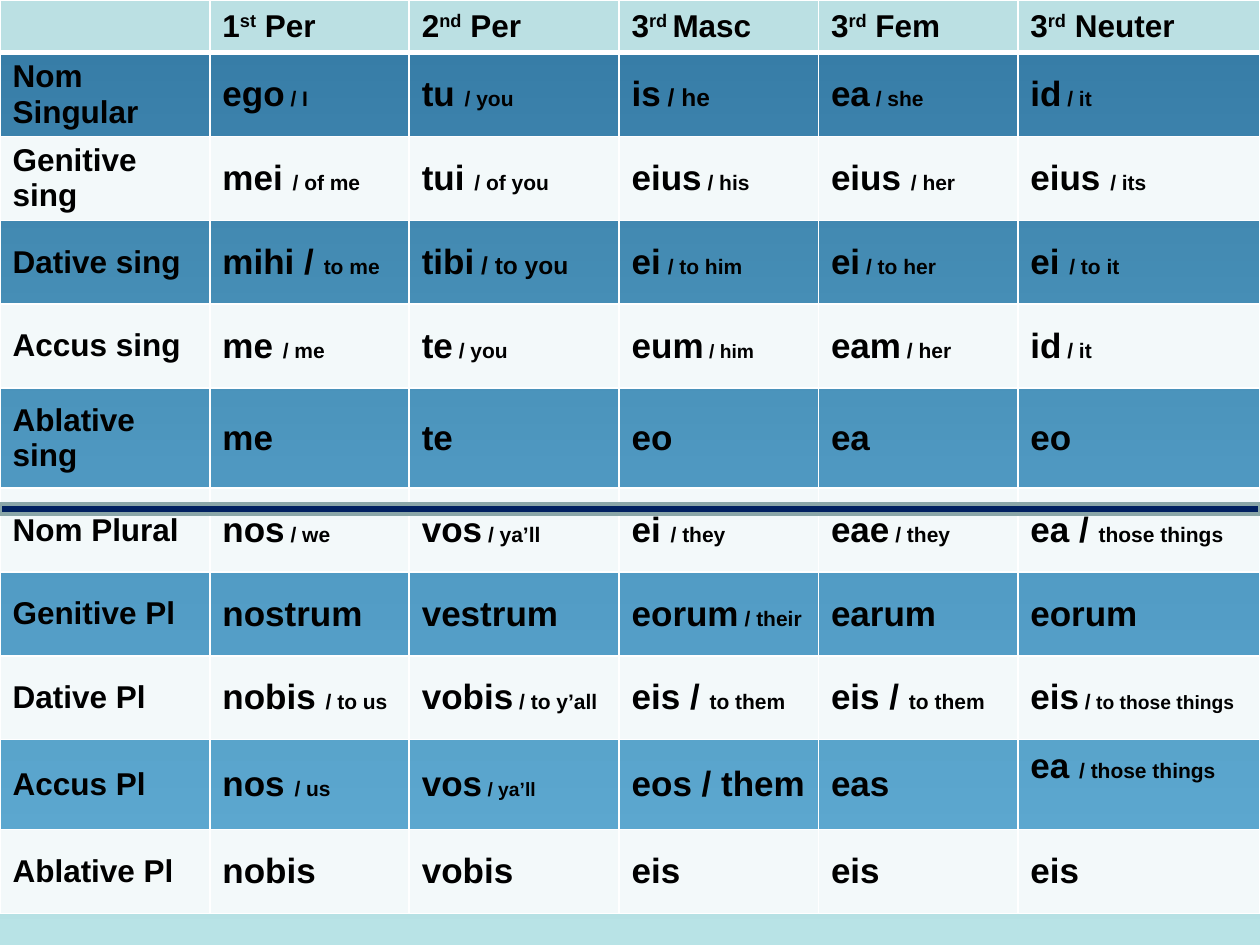
from copy import deepcopy

from lxml.etree import SubElement
from pptx import Presentation
from pptx.dml.color import RGBColor
from pptx.enum.shapes import MSO_SHAPE
from pptx.enum.text import MSO_ANCHOR
from pptx.oxml.ns import qn
from pptx.util import Cm, Pt

BLACK = RGBColor(0x00, 0x00, 0x00)
WHITE = RGBColor(0xFF, 0xFF, 0xFF)
HEADER_TEAL = RGBColor(0xBB, 0xE0, 0xE3)
PALE = RGBColor(0xF3, 0xF9, 0xFA)
BLUE = RGBColor(0x00, 0x70, 0xC0)
NAVY = RGBColor(0x00, 0x20, 0x60)
GREY_TEAL = RGBColor(0x8A, 0xA6, 0xA8)
BACKGROUND_STOPS = [
    (0, RGBColor(0x6D, 0x86, 0x88)),
    (0.5, RGBColor(0x9B, 0xBF, 0xC2)),
    (1, RGBColor(0xB8, 0xE3, 0xE6)),
]

FONT = "Arial"
LABEL_SIZE, LATIN_SIZE, GLOSS_SIZE = 18, 20, 12
COLUMN_WIDTHS = [4.23, 4.02, 4.23, 4.02, 4.02, 4.88]
HEADER_HEIGHT = 1.06

# Number, ordinal ending, rest of the heading
HEADINGS = [("1", "st", " Per"), ("2", "nd", " Per"), ("3", "rd ", "Masc"),
            ("3", "rd", " Fem"), ("3", "rd", " Neuter")]

# Label, height in cm, opacity of the blue fill (None for a pale row), cells.
# A cell is a Latin form, or the form with its glosses; a gloss may carry a size.
ROWS = [
    ("Nom Singular", 1.69, 51,
     [("ego", " / I"), ("tu ", "/ you"), ("is", (" / he", 14)),
      ("ea", " / she"), ("id", " / it")]),
    ("Genitive sing", 1.69, None,
     [("mei ", "/ of me"), ("tui ", "/ of you"), ("eius", " / his"),
      ("eius ", "/ her"), ("eius ", "/ its")]),
    ("Dative sing", 1.69, 49,
     [("mihi / ", "to me"), ("tibi", (" / to you", 14)),
      ("ei", (" ", 14), "/ to him"), ("ei", " / to her"), ("ei ", "/ to it")]),
    ("Accus sing", 1.69, None,
     [("me ", "/ me"), ("te", " / you"), ("eum", (" / him", 11)),
      ("eam", " / her"), ("id", " / it")]),
    ("Ablative sing", 2.02, 49, ["me", "te", "eo", "ea", "eo"]),
    ("Nom Plural", 1.69, None,
     [("nos", " / we"), ("vos", " / ya’ll"), ("ei ", "/ they"),
      ("eae", " / they"), ("ea / ", "those things")]),
    ("Genitive Pl", 1.69, 49,
     ["nostrum", "vestrum", ("eorum", " / their"), "earum", "eorum"]),
    ("Dative Pl", 1.69, None,
     [("nobis ", "/ to us"), ("vobis", " / to y’all"), ("eis / ", "to them"),
      ("eis / ", "to them"), ("eis", " /", (" to those things", 11))]),
    ("Accus Pl", 1.81, 48,
     [("nos ", "/ us"), ("vos", (" / ya’ll", 11)), "eos / them", "eas",
      ("ea ", "/ those things")]),
    ("Ablative Pl", 1.69, None, ["nobis", "vobis", "eis", "eis", "eis"]),
]


def paint_background(page):
    fill = page.background.fill
    fill.gradient()
    fill.gradient_angle = 270
    stop_list = page._element.find(".//" + qn("a:gsLst"))
    stop_list.append(deepcopy(stop_list[0]))
    for stop, (position, color) in zip(fill.gradient_stops, BACKGROUND_STOPS):
        stop.position = position
        stop.color.rgb = color


def style_cell(cell, color, opacity=None, bottom_width=1):
    """Set white borders, fill and anchor; opacity is a percentage."""
    properties = cell._tc.get_or_add_tcPr()
    for side, width in (("L", 1), ("R", 1), ("T", 1), ("B", bottom_width)):
        line = SubElement(properties, qn(f"a:ln{side}"), w=str(Pt(width)))
        SubElement(SubElement(line, qn("a:solidFill")), qn("a:srgbClr"), val=str(WHITE))
    cell.fill.solid()
    cell.fill.fore_color.rgb = color
    if opacity is not None:
        fill_color = properties.find(qn("a:solidFill"))[0]
        SubElement(fill_color, qn("a:alpha"), val=str(opacity * 1000))
    cell.vertical_anchor = MSO_ANCHOR.MIDDLE


def write_cell(cell, parts):
    """Write (text, size) parts in one bold paragraph and return its runs."""
    para = cell.text_frame.paragraphs[0]
    para.font.name = FONT
    para.font.bold = True
    para.font.color.rgb = BLACK
    spans = []
    for text, size in parts:
        span = para.add_run()
        span.text = text
        span.font.size = Pt(size)
        spans.append(span)
    return spans


def latin_parts(entry):
    if isinstance(entry, str):
        return [(entry, LATIN_SIZE)]
    form, *glosses = entry
    return [(form, LATIN_SIZE)] + [
        (gloss, GLOSS_SIZE) if isinstance(gloss, str) else gloss for gloss in glosses]


def fill_header(table):
    for column in range(len(COLUMN_WIDTHS)):
        style_cell(table.cell(0, column), HEADER_TEAL, bottom_width=3)
    for column, heading in enumerate(HEADINGS, start=1):
        spans = write_cell(table.cell(0, column), [(text, LABEL_SIZE) for text in heading])
        spans[1]._r.get_or_add_rPr().set("baseline", "30000")


def add_pronoun_table(page, left, top, width):
    heights = [HEADER_HEIGHT] + [height for _, height, _, _ in ROWS]
    frame = page.shapes.add_table(len(heights), len(COLUMN_WIDTHS),
                                  left, top, width, Cm(sum(heights)))
    table = frame.table
    table.first_row = table.horz_banding = False
    for column, column_width in zip(table.columns, COLUMN_WIDTHS):
        column.width = Cm(column_width)
    for row, height in zip(table.rows, heights):
        row.height = Cm(height)

    fill_header(table)
    for row, (label, _, opacity, entries) in enumerate(ROWS, start=1):
        contents = [[(label, LABEL_SIZE)]] + [latin_parts(entry) for entry in entries]
        for column, parts in enumerate(contents):
            cell = table.cell(row, column)
            style_cell(cell, PALE if opacity is None else BLUE, opacity)
            write_cell(cell, parts)

    # The neuter accusative plural sits above the middle of its row
    table.cell(9, 5).margin_bottom = Cm(0.85)


def add_number_divider(page, left, top, width):
    """Draw the bar between singular and plural."""
    bar = page.shapes.add_shape(MSO_SHAPE.RECTANGLE, left, top, width, Cm(0.2))
    bar.shadow.inherit = False
    bar.fill.solid()
    bar.fill.fore_color.rgb = NAVY
    bar.line.color.rgb = GREY_TEAL
    bar.line.width = Pt(2)


def main():
    deck = Presentation()
    deck.slide_width, deck.slide_height = Cm(25.4), Cm(19.05)
    page = deck.slides.add_slide(deck.slide_layouts[6])
    paint_background(page)
    add_pronoun_table(page, 0, 0, deck.slide_width)
    add_number_divider(page, 0, Cm(10.16), deck.slide_width)
    deck.save("out.pptx")


if __name__ == "__main__":
    main()
